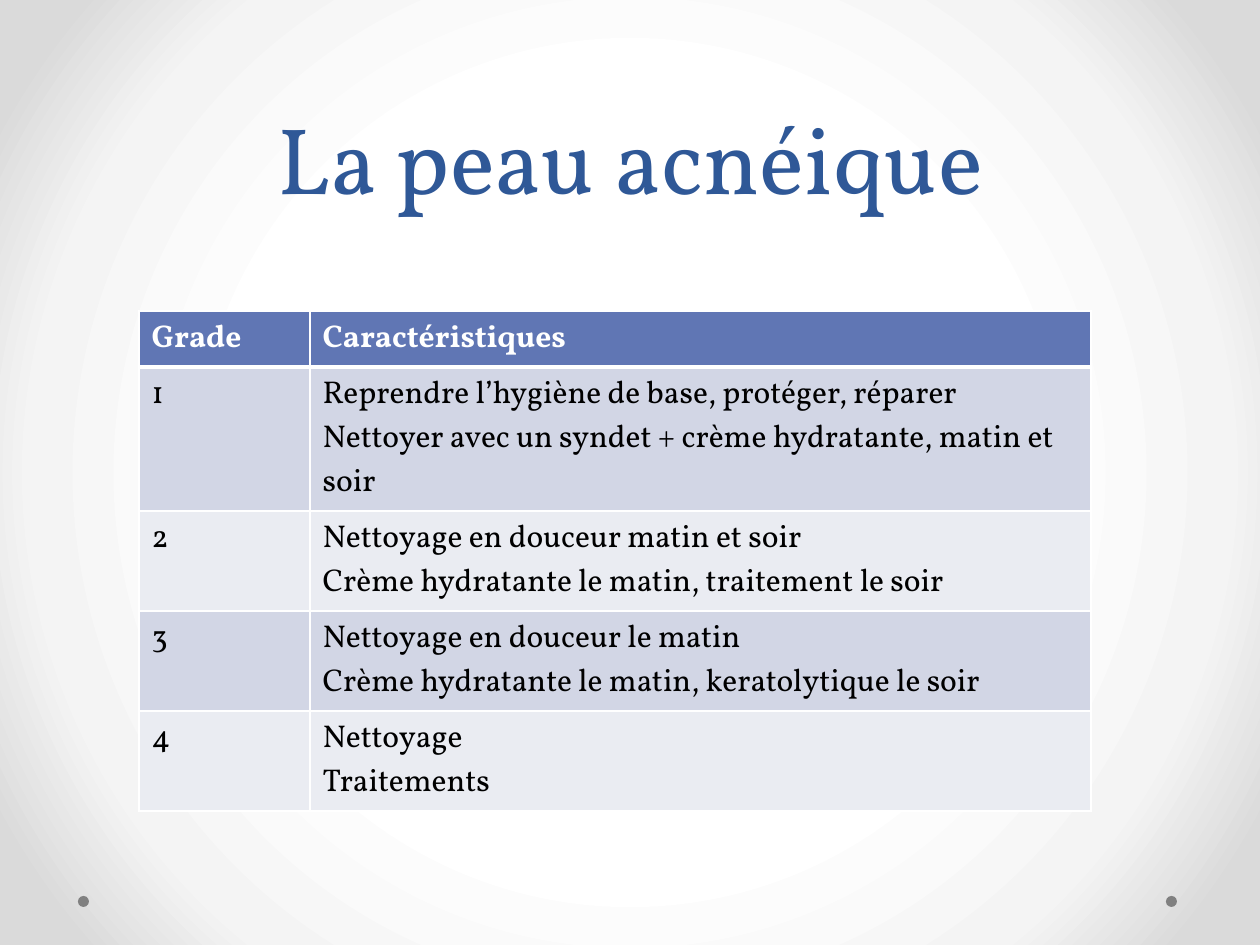
from lxml.etree import SubElement
from pptx import Presentation
from pptx.dml.color import RGBColor as Rgb
from pptx.enum.shapes import MSO_SHAPE as Shape
from pptx.enum.text import MSO_ANCHOR as Anchor, PP_ALIGN as Align
from pptx.oxml import parse_xml
from pptx.oxml.ns import nsdecls, qn
from pptx.util import Pt

PX = 914400 // 126
FONT = "Vollkorn"
COLORS = {
    "title": "2F5897", "header": "6076B4", "odd": "D2D6E5", "even": "EAECF2",
    "white": "FFFFFF", "black": "000000", "dot": "808080",
}
BACKGROUND_STOPS = [(50, "FFFFFF"), (76, "F4F4F4"), (92, "DADADA")]
COLUMN_WIDTHS = [171, 781]
ROW_HEIGHTS = [56, 144, 100, 100, 100]
ROWS = [
    ("Grade", ["Caractéristiques"]),
    ("1", ["Reprendre l’hygiène de base, protéger, réparer",
           "Nettoyer avec un syndet + crème hydratante, matin et soir"]),
    ("2", ["Nettoyage en douceur matin et soir",
           "Crème hydratante le matin, traitement le soir"]),
    ("3", ["Nettoyage en douceur le matin",
           "Crème hydratante le matin, keratolytique le soir"]),
    ("4", ["Nettoyage", "Traitements"]),
]


def color(name):
    """Return the named colour."""
    return Rgb.from_string(COLORS[name])


def place(*lengths):
    """Turn pixel lengths into EMU."""
    return [length * PX for length in lengths]


def paint_background(page):
    """Fill the page with a circular gradient."""
    page.background.fill.gradient()
    gradient = page.element.find(".//" + qn("a:gradFill"))
    stops = "".join(
        f'<a:gs pos="{position * 1000}"><a:srgbClr val="{value}"/></a:gs>'
        for position, value in BACKGROUND_STOPS)
    radial = parse_xml(
        f'<a:gradFill {nsdecls("a")} rotWithShape="1"><a:gsLst>{stops}</a:gsLst>'
        '<a:path path="circle"><a:fillToRect l="50000" t="50000" r="50000" b="50000"/>'
        '</a:path></a:gradFill>')
    gradient.getparent().replace(gradient, radial)


def add_dot(page, left, top, size):
    """Draw a plain round dot."""
    dot = page.shapes.add_shape(Shape.OVAL, *place(left, top, size, size))
    dot.shadow.inherit = False
    dot.fill.solid()
    dot.fill.fore_color.rgb = color("dot")
    dot.line.fill.background()


def write(para, text, size, color_name, bold=False):
    """Add a styled run to a paragraph."""
    span = para.add_run()
    span.text = text
    span.font.name = FONT
    span.font.size = Pt(size)
    span.font.bold = bold
    span.font.color.rgb = color(color_name)


def add_title(page, text):
    """Add the centred title, resting on the bottom of its box."""
    box = page.shapes.add_textbox(*place(63, 0, 1134, 220))
    frame = box.text_frame
    frame.word_wrap = True
    frame.vertical_anchor = Anchor.BOTTOM
    para = frame.paragraphs[0]
    para.alignment = Align.CENTER
    para.line_spacing = Pt(58)
    write(para, text, 54, "title")


def set_borders(cell, top, bottom):
    """Draw white cell borders, with top and bottom widths in points."""
    properties = cell._tc.get_or_add_tcPr()
    widths = {"lnL": 1, "lnR": 1, "lnT": top, "lnB": bottom}
    for index, (tag, width) in enumerate(widths.items()):
        line = SubElement(properties, qn(f"a:{tag}"), w=str(Pt(width)))
        fill = SubElement(line, qn("a:solidFill"))
        SubElement(fill, qn("a:srgbClr"), val=COLORS["white"])
        properties.insert(index, line)


def fill_cell(cell, lines, row):
    """Fill, outline and write one cell according to its row."""
    header = row == 0
    cell.fill.solid()
    cell.fill.fore_color.rgb = color("header" if header else "odd" if row % 2 else "even")
    set_borders(cell, 3 if row == 1 else 1, 3 if header else 1)
    frame = cell.text_frame
    for index, text in enumerate(lines):
        para = frame.add_paragraph() if index else frame.paragraphs[0]
        write(para, text, 18, "white" if header else "black", header)


def add_grade_table(page):
    """Add the table of acne grades."""
    frame = page.shapes.add_table(
        len(ROWS), len(COLUMN_WIDTHS),
        *place(139, 311, sum(COLUMN_WIDTHS), sum(ROW_HEIGHTS)))
    table = frame.table
    for column, width in zip(table.columns, COLUMN_WIDTHS):
        column.width = width * PX
    for row, (height, (grade, lines)) in enumerate(zip(ROW_HEIGHTS, ROWS)):
        table.rows[row].height = height * PX
        fill_cell(table.cell(row, 0), [grade], row)
        fill_cell(table.cell(row, 1), lines, row)


def main():
    """Build the slide and save it."""
    deck = Presentation()
    deck.slide_width, deck.slide_height = place(1260, 945)
    page = deck.slides.add_slide(deck.slide_layouts[6])
    paint_background(page)
    for left in (1166, 78):
        add_dot(page, left, 896, 11)
    add_title(page, "La peau acnéique")
    add_grade_table(page)
    deck.save("out.pptx")


if __name__ == "__main__":
    main()
